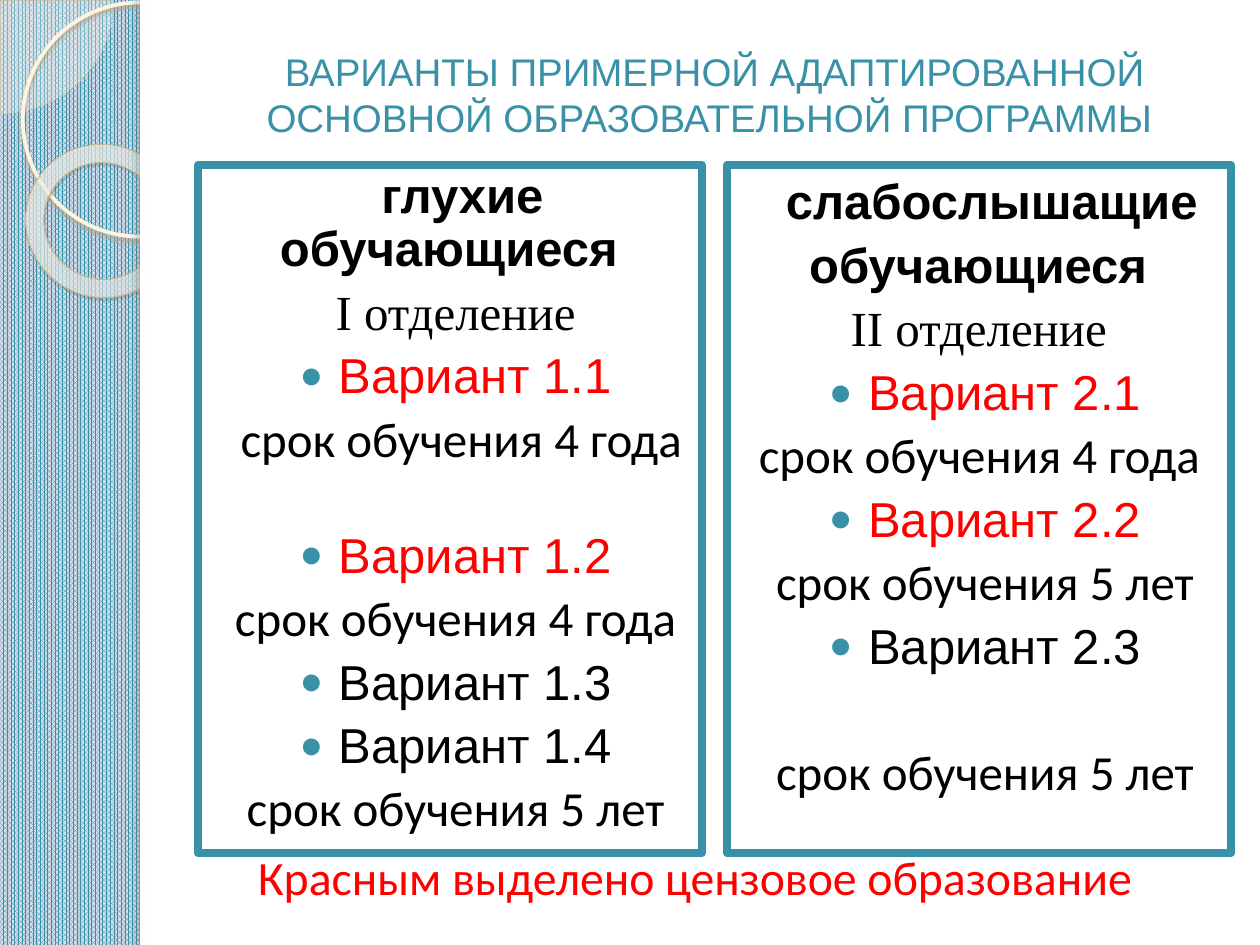
"""Build a slide comparing programme variants for deaf and hard-of-hearing pupils."""
from dataclasses import dataclass

import pptx
import pptx.dml.color
import pptx.enum.dml
import pptx.enum.shapes
import pptx.enum.text
import pptx.oxml
import pptx.oxml.ns
import pptx.util

Cm, Pt = pptx.util.Cm, pptx.util.Pt
SHAPES = pptx.enum.shapes.MSO_SHAPE
ALIGN = pptx.enum.text.PP_ALIGN
ANCHOR = pptx.enum.text.MSO_ANCHOR
qn = pptx.oxml.ns.qn
NSDECL = pptx.oxml.ns.nsdecls("a")


@dataclass(frozen=True)
class Theme:
    """Colours, fonts and type sizes."""
    accent: str = "3891A7"
    pattern_back: str = "D7DDEB"
    paper: str = "FFFFFF"
    ink: str = "000000"
    alert: str = "FF0000"
    sans: str = "Arial"
    serif: str = "Times New Roman"
    plain: str = "Calibri"
    title_size: float = 22
    body_size: float = 28
    note_size: float = 27.3


@dataclass(frozen=True)
class RowStyle:
    """Look of one kind of row in a panel."""
    font: str
    color: str
    bold: bool = False
    bullet: bool = False


def rgb(color):
    """Turn a hex string into a colour."""
    return pptx.dml.color.RGBColor.from_string(color)


def color_xml(color, opacity):
    """Return a translucent colour element as text."""
    return f'<a:srgbClr {NSDECL} val="{color}"><a:alpha val="{opacity * 1000}"/></a:srgbClr>'


class Deck:
    """Holds the theme and the current slide."""

    def __init__(self, theme):
        """Open a 4:3 presentation with one title-only slide."""
        self.theme = theme
        self.presentation = pptx.Presentation()
        self.presentation.slide_width = Cm(25.4)
        self.presentation.slide_height = Cm(19.05)
        self.slide = self.presentation.slides.add_slide(self.presentation.slide_layouts[5])

    def background(self):
        """Cover the background with a dense dot pattern."""
        fill = self.slide.background.fill
        fill.patterned()
        fill.pattern = pptx.enum.dml.MSO_PATTERN.PERCENT_80
        fill.fore_color.rgb = rgb(self.theme.accent)
        fill.back_color.rgb = rgb(self.theme.pattern_back)

    def shape(self, kind, box, fill=None, opacity=100, line=None, width=0, shadow=None):
        """Add a preset shape with optional fill, line and shadow."""
        shape = self.slide.shapes.add_shape(kind, *map(Cm, box))
        if fill:
            shape.fill.solid()
            shape.fill.fore_color.rgb = rgb(fill)
            if opacity < 100:
                solid = shape.element.spPr.find(qn("a:solidFill"))
                solid.replace(solid[0], pptx.oxml.parse_xml(color_xml(fill, opacity)))
        else:
            shape.fill.background()
        if line:
            shape.line.color.rgb = rgb(line)
            shape.line.width = Pt(width)
        else:
            shape.line.fill.background()
        shape.shadow.inherit = False
        if shadow:
            color, strength, blur, distance, angle = shadow
            shape.element.spPr.find(qn("a:effectLst")).append(pptx.oxml.parse_xml(
                f'<a:outerShdw {NSDECL} blurRad="{Pt(blur)}" dist="{Pt(distance)}" '
                f'dir="{angle * 60000}" algn="tl" rotWithShape="0">'
                f'{color_xml(color, strength)}</a:outerShdw>'))
        return shape

    def radial_fill(self, shape, stops):
        """Give a shape a circular gradient centred off its upper right."""
        shape.fill.gradient()
        gradient = shape.element.spPr.find(qn("a:gradFill"))
        stop_list = "".join(f'<a:gs pos="{place * 1000}">{color_xml(color, opacity)}</a:gs>'
                            for place, color, opacity in stops)
        gradient.getparent().replace(gradient, pptx.oxml.parse_xml(
            f'<a:gradFill {NSDECL} rotWithShape="1"><a:gsLst>{stop_list}</a:gsLst>'
            '<a:path path="circle"><a:fillToRect l="-408000" t="-50000" '
            'r="508000" b="150000"/></a:path></a:gradFill>'))

    def format_text(self, paragraph, font, size, color, bold=False):
        """Format every run of a paragraph."""
        for run in paragraph.runs:
            run.font.name, run.font.size, run.font.bold = font, Pt(size), bold
            run.font.color.rgb = rgb(color)

    def title(self, text, box):
        """Fill the title placeholder and bring it in front of the backdrop."""
        title = self.slide.shapes.title
        title.left, title.top, title.width, title.height = map(Cm, box)
        title.element.getparent().append(title.element)
        frame = title.text_frame
        frame.text = text
        frame.word_wrap = True
        frame.vertical_anchor = ANCHOR.MIDDLE
        frame.margin_bottom = Cm(1.04)
        frame.paragraphs[0].alignment = ALIGN.CENTER
        self.format_text(frame.paragraphs[0], self.theme.sans, self.theme.title_size,
                         self.theme.accent)

    def bullet(self, properties):
        """Add an accent-coloured round bullet to paragraph properties."""
        for tag in (f'<a:buClr {NSDECL}><a:srgbClr val="{self.theme.accent}"/></a:buClr>',
                    f'<a:buSzPct {NSDECL} val="80000"/>',
                    f'<a:buFont {NSDECL} typeface="{self.theme.sans}"/>',
                    f'<a:buChar {NSDECL} char="●"/>'):
            properties.append(pptx.oxml.parse_xml(tag))

    def panel(self, box, rows, top_margin):
        """Add a framed list; each row is a style, a text and a gap below."""
        frame = self.shape(SHAPES.RECTANGLE, box, line=self.theme.accent, width=4.5).text_frame
        frame.text = "\n".join(text for _, text, _ in rows)
        frame.word_wrap = True
        frame.vertical_anchor = ANCHOR.TOP
        frame.margin_top = Cm(top_margin)
        for paragraph, (style, _, gap) in zip(frame.paragraphs, rows):
            paragraph.alignment = ALIGN.CENTER
            paragraph.line_spacing = 0.9
            paragraph.space_before = Pt(6)
            paragraph.space_after = Pt(gap)
            properties = paragraph._p.get_or_add_pPr()
            properties.set("marL", str(Cm(1.02 if style.bullet else 0.23)))
            properties.set("indent", str(Cm(-0.79 if style.bullet else 0)))
            if style.bullet:
                self.bullet(properties)
            self.format_text(paragraph, style.font, self.theme.body_size, style.color, style.bold)

    def note(self, text, box):
        """Add a one-line note in the alert colour."""
        frame = self.slide.shapes.add_textbox(*map(Cm, box)).text_frame
        frame.text = text
        frame.word_wrap = True
        frame.vertical_anchor = ANCHOR.MIDDLE
        self.format_text(frame.paragraphs[0], self.theme.plain, self.theme.note_size,
                         self.theme.alert)


def main():
    """Compose and save the slide."""
    theme = Theme()
    deck = Deck(theme)
    deck.background()
    sector = deck.shape(SHAPES.PIE, (-2.26, -2.26, 4.55, 4.55), "FEFAF4", 33, "D3C39F", 0.25)
    sector.adjustments[0], sector.adjustments[1] = 0, 54
    deck.shape(SHAPES.OVAL, (0.46, 0.05, 4.72, 4.72), line="FFF5DE", width=2.15,
               shadow=("B0A68F", 85, 2, 2, 90))
    ring = deck.shape(SHAPES.DONUT, (0.51, 2.92, 3.12, 3.07), line="C7B893", width=0.58,
                      shadow=("5A5444", 35, 1, 1.2, 75))
    ring.adjustments[0] = 0.12
    ring.rotation = 38.6
    deck.radial_fill(ring, [(0, "FFFCF6", 70), (70, "FFFEFB", 55), (100, "F0D28E", 60)])
    deck.shape(SHAPES.RECTANGLE, (2.82, 0, 22.58, 19.05), theme.paper)
    deck.shape(SHAPES.RECTANGLE, (2.82, 0, 0.2, 19.05), theme.paper,
               shadow=("736F63", 25, 3, 3, 180))

    heading = RowStyle(theme.sans, theme.ink, bold=True)
    section = RowStyle(theme.serif, theme.ink)
    qualified = RowStyle(theme.sans, theme.alert, bullet=True)
    variant = RowStyle(theme.sans, theme.ink, bullet=True)
    term = RowStyle(theme.plain, theme.ink)
    deaf = [(heading, " глухие обучающиеся ", 0), (section, "I отделение", 0),
            (qualified, "Вариант 1.1", 0), (term, " срок обучения 4 года", 30),
            (qualified, "Вариант 1.2", 0), (term, "срок обучения 4 года", 0),
            (variant, "Вариант 1.3", 0), (variant, "Вариант 1.4", 0),
            (term, "срок обучения 5 лет", 0)]
    hard_of_hearing = [(heading, " слабослышащие", 0), (heading, "обучающиеся ", 0),
                       (section, "II отделение ", 0), (qualified, "Вариант 2.1", 0),
                       (term, "срок обучения 4 года ", 0), (qualified, "Вариант 2.2", 0),
                       (term, "срок обучения 5 лет", 0), (variant, "Вариант 2.3", 36),
                       (term, "срок обучения 5 лет", 0)]
    deck.title("ВАРИАНТЫ ПРИМЕРНОЙ АДАПТИРОВАННОЙ ОСНОВНОЙ ОБРАЗОВАТЕЛЬНОЙ ПРОГРАММЫ ",
               (3.99, 0.76, 20.83, 3.18))
    deck.panel((3.99, 3.33, 10.16, 13.87), deaf, 0.13)
    deck.panel((14.66, 3.33, 10.16, 13.87), hard_of_hearing, 0.25)
    deck.note("Красным выделено цензовое образование", (4.95, 16.87, 18.64, 1.6))
    deck.presentation.save("out.pptx")


if __name__ == "__main__":
    main()
